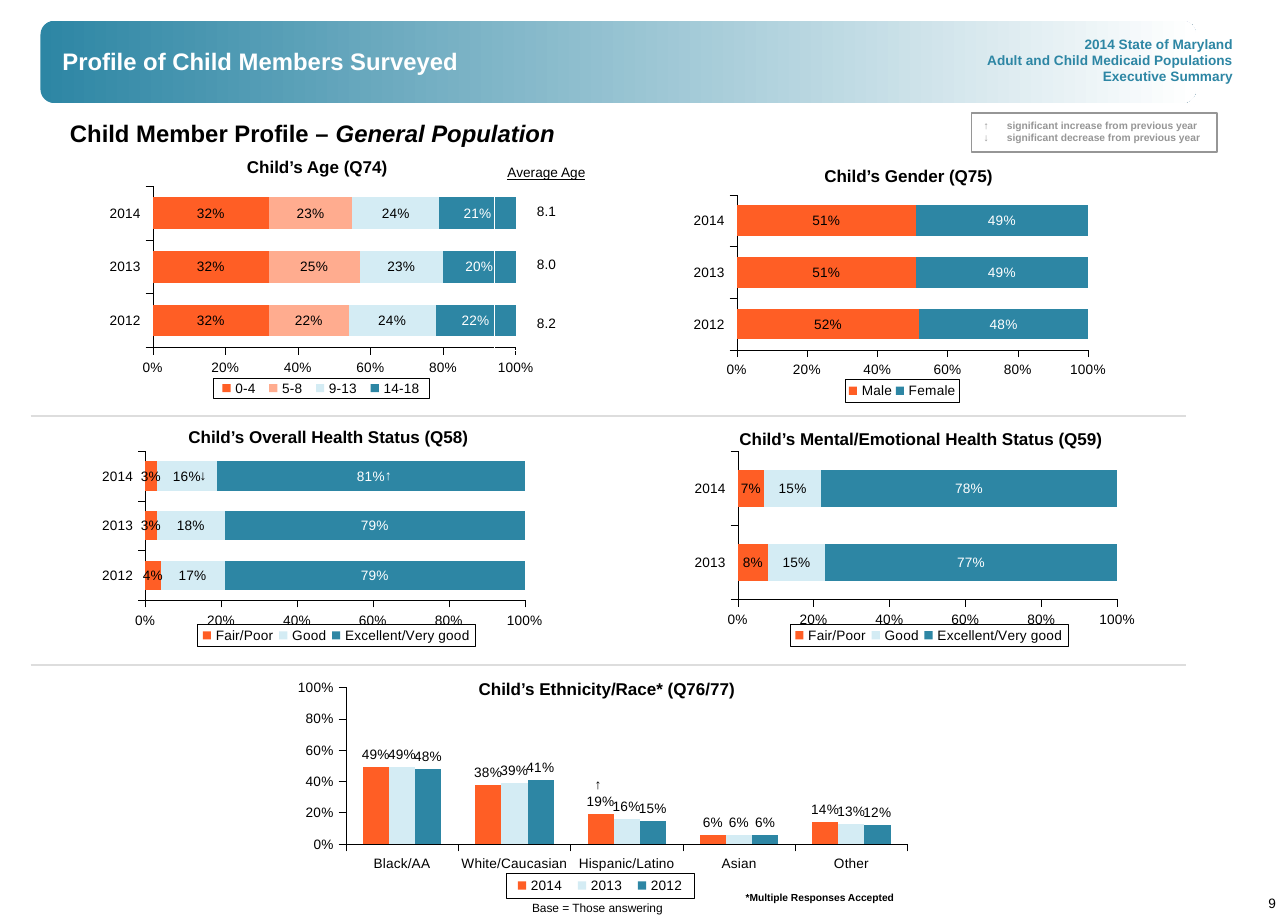
"""Build the child member profile slide with its five survey charts."""
from pptx import Presentation
from pptx.chart.data import CategoryChartData
from pptx.dml.color import RGBColor
from pptx.enum.chart import XL_CHART_TYPE, XL_LABEL_POSITION, XL_LEGEND_POSITION, XL_TICK_MARK
from pptx.enum.shapes import MSO_CONNECTOR, MSO_SHAPE
from pptx.enum.text import MSO_ANCHOR, PP_ALIGN
from pptx.oxml import parse_xml
from pptx.oxml.ns import nsdecls, qn
from pptx.util import Inches, Pt

STACKED, COLUMN = XL_CHART_TYPE.BAR_STACKED_100, XL_CHART_TYPE.COLUMN_CLUSTERED
OUTSIDE_END, CENTER_LABEL = XL_LABEL_POSITION.OUTSIDE_END, XL_LABEL_POSITION.CENTER
LEGEND_BOTTOM = XL_LEGEND_POSITION.BOTTOM
TICK_OUT, TICK_NONE = XL_TICK_MARK.OUTSIDE, XL_TICK_MARK.NONE
STRAIGHT, RECT, ROUNDED = MSO_CONNECTOR.STRAIGHT, MSO_SHAPE.RECTANGLE, MSO_SHAPE.ROUNDED_RECTANGLE
LEFT, CENTER, RIGHT = PP_ALIGN.LEFT, PP_ALIGN.CENTER, PP_ALIGN.RIGHT
TOP, MIDDLE, BOTTOM = MSO_ANCHOR.TOP, MSO_ANCHOR.MIDDLE, MSO_ANCHOR.BOTTOM

ORANGE = RGBColor(0xFF, 0x5E, 0x25)
PEACH = RGBColor(0xFF, 0xAC, 0x8F)
PALE = RGBColor(0xD4, 0xEC, 0xF4)
TEAL = RGBColor(0x2D, 0x86, 0xA4)
BLACK = RGBColor(0x00, 0x00, 0x00)
WHITE = RGBColor(0xFF, 0xFF, 0xFF)
GRAY = RGBColor(0x96, 0x96, 0x96)
RULE = RGBColor(0xDD, 0xDD, 0xDD)


def write(tf, lines, size, color=BLACK, align=LEFT, anchor=TOP, wrap=False, **fmt):
    """Fill a text frame with one formatted paragraph per line."""
    tf.word_wrap, tf.vertical_anchor = wrap, anchor
    for i, line in enumerate(lines):
        p = tf.paragraphs[0] if i == 0 else tf.add_paragraph()
        p.alignment = align
        r = p.add_run()
        r.text = line
        r.font.color.rgb = color
        for key, value in {"name": "Arial", "size": Pt(size), **fmt}.items():
            setattr(r.font, key, value)


def set_layout(parent, index, box, inner=False):
    """Give a plot area or legend a manual layout in chart fractions."""
    for old in parent.findall(qn("c:layout")):
        parent.remove(old)
    target = '<c:layoutTarget val="inner"/>' if inner else ""
    modes = '<c:xMode val="edge"/><c:yMode val="edge"/>'
    sizes = "".join(f'<c:{k} val="{v:.3f}"/>' for k, v in zip("xywh", box))
    parent.insert(index, parse_xml(
        f'<c:layout {nsdecls("c")}><c:manualLayout>{target}{modes}{sizes}'
        "</c:manualLayout></c:layout>"))


prs = Presentation()
prs.slide_width, prs.slide_height = Inches(10.5), Inches(7.5)
s = prs.slides.add_slide(prs.slide_layouts[5])

banner = s.shapes.add_shape(ROUNDED, Inches(0.33), Inches(0.17), Inches(9.42), Inches(0.67))
banner.shadow.inherit = False
banner.line.fill.background()
banner.fill.gradient()
banner.fill.gradient_angle = 0
for stop, position, color in zip(banner.fill.gradient_stops, (0, 1), (TEAL, WHITE)):
    stop.position, stop.color.rgb = position, color

title = s.shapes.title
title.left, title.top, title.width, title.height = (Inches(v) for v in (0.47, 0.92, 9, 0.42))
write(title.text_frame, ["Child Member Profile – "], 14, wrap=True, bold=True)
r = title.text_frame.paragraphs[0].add_run()
r.text = "General Population"
r.font.color.rgb = BLACK
for key, value in {"name": "Arial", "size": Pt(14), "bold": True, "italic": True}.items():
    setattr(r.font, key, value)

for y in (3.39, 5.42):
    sp = s.shapes.add_connector(STRAIGHT, Inches(0.25), Inches(y), Inches(9.67), Inches(y))
    sp.line.color.rgb, sp.line.width = RULE, Pt(1)
    sp._element.spPr.append(parse_xml(f'<a:effectLst {nsdecls("a")}/>'))

YEARS = ["2012", "2013", "2014"]
RACES = ["Black/AA", "White/Caucasian", "Hispanic/Latino", "Asian", "Other"]
charts = [
    (COLUMN, (2.41, 5.5, 5.01, 1.84), (0.082, 0.057, 0.914, 0.694), (4.13, 7.12, 1.53, 0.2),
     130, RACES, [
         ("2014", (0.49, 0.38, 0.19, 0.06, 0.14), ORANGE),
         ("2013", (0.49, 0.39, 0.16, 0.06, 0.13), PALE),
         ("2012", (0.48, 0.41, 0.15, 0.06, 0.12), TEAL)]),
    (STACKED, (0.83, 1.51, 3.59, 1.82), (0.116, 0.005, 0.824, 0.722), (1.74, 3.08, 1.76, 0.17),
     70, YEARS, [
         ("0-4", (0.32, 0.32, 0.32), ORANGE),
         ("5-8", (0.22, 0.25, 0.23), PEACH),
         ("9-13", (0.24, 0.23, 0.24), PALE),
         ("14-18", (0.22, 0.2, 0.21), TEAL)]),
    (STACKED, (5.6, 1.58, 3.48, 1.75), (0.117, 0.005, 0.823, 0.723), (6.89, 3.09, 0.93, 0.19),
     70, YEARS, [
         ("Male", (0.52, 0.51, 0.51), ORANGE),
         ("Female", (0.48, 0.49, 0.49), TEAL)]),
    (STACKED, (0.75, 3.67, 3.75, 1.67), (0.116, 0.005, 0.825, 0.728), (1.61, 5.09, 2.27, 0.18),
     70, YEARS, [
         ("Fair/Poor", (0.04, 0.03, 0.03), ORANGE),
         ("Good", (0.17, 0.18, 0.16), PALE),
         ("Excellent/Very good", (0.79, 0.79, 0.81), TEAL)]),
    (STACKED, (5.58, 3.67, 3.75, 1.66), (0.116, 0.005, 0.825, 0.728), (6.44, 5.09, 2.27, 0.18),
     100, YEARS[1:], [
         ("Fair/Poor", (0.08, 0.07), ORANGE),
         ("Good", (0.15, 0.15), PALE),
         ("Excellent/Very good", (0.77, 0.78), TEAL)]),
]
for kind, box, plot_box, legend_box, gap, categories, series in charts:
    data = CategoryChartData(number_format="0%")
    data.categories = categories
    for name, values, color in series:
        data.add_series(name, values)
    chart = s.shapes.add_chart(kind, *(Inches(v) for v in box), data).chart
    chart.has_title = False
    chart.font.name, chart.font.size, chart.font.color.rgb = "Arial", Pt(8), BLACK

    plot = chart.plots[0]
    plot.vary_by_categories = False
    plot.gap_width, plot.overlap = gap, 100 if kind == STACKED else 0
    for ser, (name, values, color) in zip(plot.series, series):
        ser.format.fill.solid()
        ser.format.fill.fore_color.rgb = color
        labels = ser.data_labels
        labels.show_value = True
        labels.number_format, labels.number_format_is_linked = "0%", False
        labels.position = CENTER_LABEL if kind == STACKED else OUTSIDE_END
        labels.font.name, labels.font.size = "Arial", Pt(8)
        labels.font.color.rgb = WHITE if kind == STACKED and color == TEAL else BLACK

    for axis in (chart.category_axis, chart.value_axis):
        axis.has_major_gridlines = False
        axis.major_tick_mark, axis.minor_tick_mark = TICK_OUT, TICK_NONE
        axis.format.line.color.rgb, axis.format.line.width = BLACK, Pt(0.25)
    axis.minimum_scale, axis.maximum_scale, axis.major_unit = 0, 1, 0.2
    axis.tick_labels.number_format = "0%"
    axis.tick_labels.number_format_is_linked = False

    chart.has_legend = True
    chart.legend.position, chart.legend.include_in_layout = LEGEND_BOTTOM, False
    legend = chart.legend._element
    x, y, w, h = box
    lx, ly, lw, lh = legend_box
    set_layout(legend, 1, ((lx - x) / w, (ly - y) / h, lw / w, lh / h))
    legend.find(qn("c:overlay")).addnext(parse_xml(
        f'<c:spPr {nsdecls("c", "a")}><a:solidFill><a:srgbClr val="FFFFFF"/></a:solidFill>'
        '<a:ln w="3175"><a:solidFill><a:srgbClr val="000000"/></a:solidFill></a:ln></c:spPr>'))
    set_layout(chart._chartSpace.chart.plotArea, 0, plot_box, inner=True)

frame = s.shapes.add_table(4, 1, Inches(4.03), Inches(1.2), Inches(0.85), Inches(1.66))
table = frame.table
table.first_row = table.horz_banding = False
ages = [("Average Age", 0.32), ("8.1", 0.39), ("8.0", 0.48), ("8.2", 0.47)]
for i, (label, height) in enumerate(ages):
    table.rows[i].height = Inches(height)
    cell = table.cell(i, 0)
    cell.fill.background()
    cell.margin_left = cell.margin_right = Inches(0.05)
    write(cell.text_frame, [label], 8, align=CENTER, wrap=True, underline=i == 0)
    cell.vertical_anchor = MIDDLE if i else BOTTOM
    p = cell.text_frame.paragraphs[0]
    p.line_spacing, p.space_after = 1.2, Pt(1.6)

heading = {"size": 10, "align": CENTER, "bold": True}
texts = [
    ((0.41, 0.23, 9.45, 0.53), ["Profile of Child Members Surveyed"],
     {"size": 14, "color": WHITE, "anchor": MIDDLE, "wrap": True, "bold": True}),
    ((7.93, 0.24, 2.22, 0.5), ["2014 State of Maryland", "Adult and Child Medicaid Populations",
                               "Executive Summary"],
     {"size": 8, "color": TEAL, "align": RIGHT, "bold": True}),
    ((1.9, 1.23, 1.37, 0.27), ["Child’s Age (Q74)"], heading),
    ((6.61, 1.3, 1.59, 0.27), ["Child’s Gender (Q75)"], heading),
    ((1.42, 3.43, 2.51, 0.27), ["Child’s Overall Health Status (Q58)"], heading),
    ((5.87, 3.44, 3.27, 0.27), ["Child’s Mental/Emotional Health Status (Q59)"], heading),
    ((3.75, 5.48, 2.39, 0.27), ["Child’s Ethnicity/Race* (Q76/77)"], heading),
    ((3.04, 3.76, 0.25, 0.24), ["↑"], {"size": 8, "color": WHITE}),
    ((1.53, 3.76, 0.25, 0.24), ["↓"], {"size": 8}),
    ((4.75, 6.28, 0.25, 0.24), ["↑"], {"size": 8}),
    ((5.98, 7.22, 1.43, 0.2), ["*Multiple Responses Accepted"], {"size": 6, "bold": True}),
    ((3.33, 7.29, 3.08, 0.22), ["Base = Those answering"],
     {"size": 7, "align": CENTER, "wrap": True}),
    ((9.98, 7.25, 0.52, 0.23), ["9"], {"size": 8, "align": RIGHT, "wrap": True}),
]
for box, lines, fmt in texts:
    write(s.shapes.add_textbox(*(Inches(v) for v in box)).text_frame, lines, **fmt)

key_box = s.shapes.add_shape(RECT, Inches(7.92), Inches(0.92), Inches(2), Inches(0.32))
key_box.shadow.inherit = False
key_box.fill.background()
key_box.line.color.rgb, key_box.line.width = GRAY, Pt(1)
write(key_box.text_frame, ["↑\tsignificant increase from previous year",
                           "↓\tsignificant decrease from previous year"],
      6, GRAY, wrap=True, bold=True)
for p in key_box.text_frame.paragraphs:
    p._p.get_or_add_pPr().append(parse_xml(
        f'<a:tabLst {nsdecls("a")}><a:tab pos="{Inches(0.19)}" algn="l"/></a:tabLst>'))

prs.save("out.pptx")
